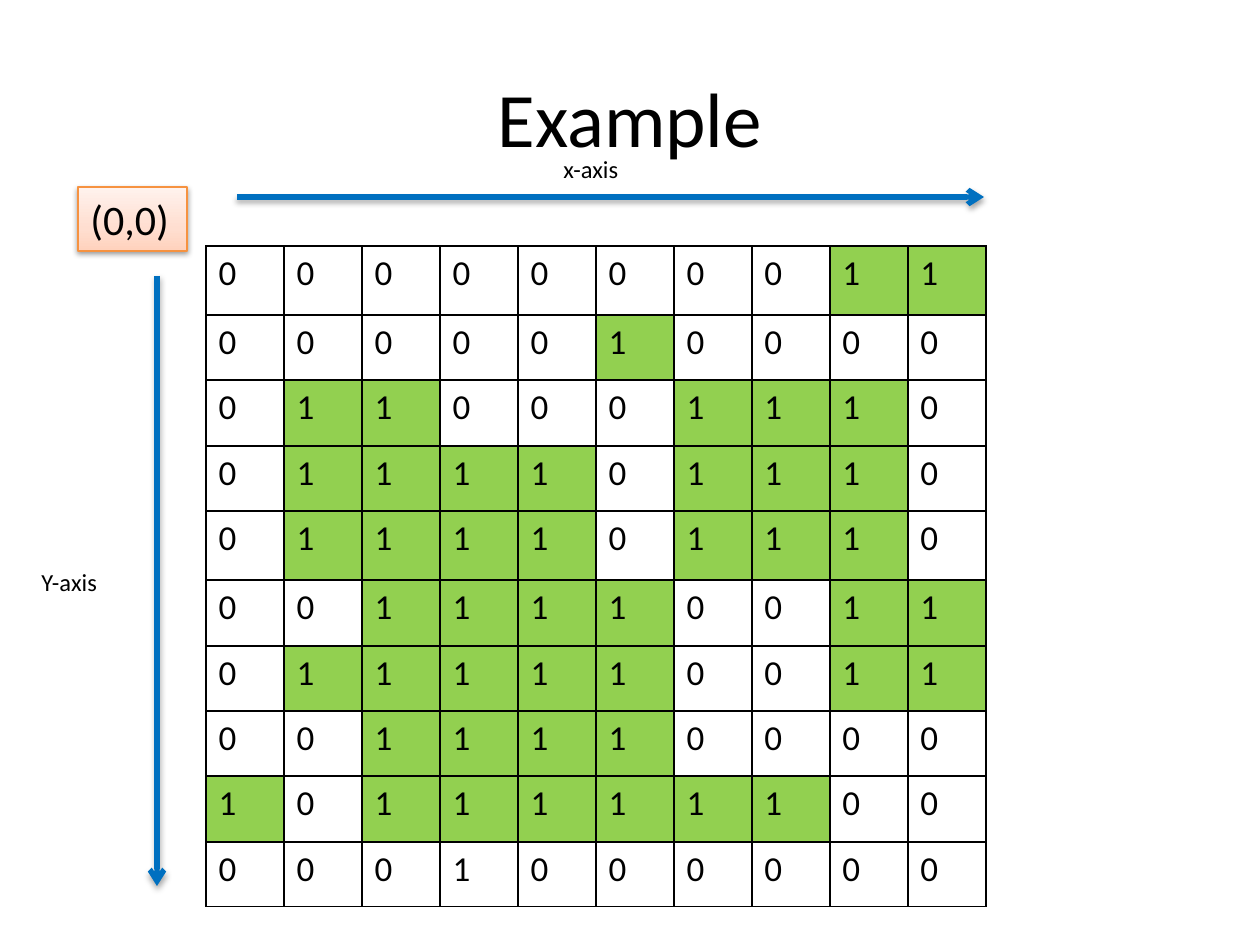
from lxml import etree
from pptx import Presentation, util as u
from pptx.dml.color import RGBColor
from pptx.enum import shapes, text

NS = "http://schemas.openxmlformats.org/drawingml/2006/main"
PX = u.Inches(1) / 126

BLACK = RGBColor(0x00, 0x00, 0x00)
BLUE = RGBColor(0x00, 0x70, 0xC0)
GREEN = RGBColor(0x92, 0xD0, 0x50)
ORANGE = RGBColor(0xF6, 0x92, 0x40)
PEACH_STOPS = [
    (0, RGBColor(0xFF, 0xD2, 0xBD)),
    (35, RGBColor(0xFF, 0xDE, 0xD0)),
    (100, RGBColor(0xFF, 0xF2, 0xED)),
]

# Binary grid: 1 marks an object pixel
PIXELS = [
    "0000000011",
    "0000010000",
    "0110001110",
    "0111101110",
    "0111101110",
    "0011110011",
    "0111110011",
    "0011110000",
    "1011111100",
    "0001000000",
]
UNFILLED_ONES = {(9, 3)}
ROW_HEIGHTS = [69, 65, 66, 65, 69, 66, 65, 65, 66, 65]
COLUMN_WIDTH = 78


def px(length):
    return u.Emu(round(length * PX))


def xml(markup):
    tag, rest = markup[1:].split(" ", 1)
    return etree.fromstring(f'<{tag} xmlns:a="{NS}" {rest}')


def write(frame, words, size=14, font="Calibri", color=BLACK,
          align=text.PP_ALIGN.LEFT, anchor=text.MSO_ANCHOR.TOP):
    frame.word_wrap = True
    frame.vertical_anchor = anchor
    paragraph = frame.paragraphs[0]
    paragraph.alignment = align
    run = paragraph.add_run()
    run.text = words
    run.font.size = u.Pt(size)
    run.font.name = font
    run.font.color.rgb = color


class GridSlide:
    def __init__(self, deck):
        self.slide = deck.slides.add_slide(deck.slide_layouts[5])
        self.shapes = self.slide.shapes

    def title(self, words, x, y, w, h):
        heading = self.shapes.title
        heading.left, heading.top, heading.width, heading.height = map(px, (x, y, w, h))
        write(heading.text_frame, words, size=44, align=text.PP_ALIGN.CENTER,
              anchor=text.MSO_ANCHOR.MIDDLE)

    def label(self, words, x, y, w, h):
        box = self.shapes.add_textbox(*map(px, (x, y, w, h)))
        write(box.text_frame, words)
        box.text_frame.auto_size = text.MSO_AUTO_SIZE.SHAPE_TO_FIT_TEXT

    def shadow(self, properties, distance, opacity):
        properties.append(xml(
            f'<a:effectLst ><a:outerShdw blurRad="40000" dist="{distance}" dir="5400000" '
            f'rotWithShape="0"><a:srgbClr val="000000"><a:alpha val="{opacity}000"/>'
            '</a:srgbClr></a:outerShdw></a:effectLst>'))

    def axis(self, x1, y1, x2, y2):
        arrow = self.shapes.add_connector(
            shapes.MSO_CONNECTOR.STRAIGHT, *map(px, (x1, y1, x2, y2)))
        arrow.line.color.rgb = BLUE
        arrow.line.width = u.Pt(3)
        arrow.line._get_or_add_ln().append(xml('<a:tailEnd type="arrow"/>'))
        self.shadow(arrow._element.spPr, 23000, 35)

    def origin(self, words, x, y, w, h):
        corner = self.shapes.add_shape(
            shapes.MSO_SHAPE.RECTANGLE, *map(px, (x, y, w, h)))
        corner.line.color.rgb = ORANGE
        corner.line.width = u.Pt(0.75)
        stops = "".join(f'<a:gs pos="{at}000"><a:srgbClr val="{color}"/></a:gs>'
                        for at, color in PEACH_STOPS)
        properties = corner._element.spPr
        properties.insert(2, xml(
            f'<a:gradFill rotWithShape="1"><a:gsLst>{stops}</a:gsLst>'
            '<a:lin ang="16200000" scaled="0"/></a:gradFill>'))
        self.shadow(properties, 20000, 38)
        write(corner.text_frame, words, size=24)
        corner.text_frame.auto_size = text.MSO_AUTO_SIZE.SHAPE_TO_FIT_TEXT

    def grid(self, pixels, x, y):
        columns = len(pixels[0])
        table = self.shapes.add_table(
            len(pixels), columns, px(x), px(y),
            px(COLUMN_WIDTH * columns), px(sum(ROW_HEIGHTS))).table
        table.first_row = table.horz_banding = False
        for column in table.columns:
            column.width = px(COLUMN_WIDTH)
        for r, values in enumerate(pixels):
            table.rows[r].height = px(ROW_HEIGHTS[r])
            for c, value in enumerate(values):
                self.pixel(table.cell(r, c), value,
                           value == "1" and (r, c) not in UNFILLED_ONES)

    def pixel(self, cell, value, marked):
        write(cell.text_frame, value, size=20)
        for side in "LRTB":
            cell._tc.get_or_add_tcPr().append(xml(
                f'<a:ln{side} w="12700"><a:solidFill><a:srgbClr val="{BLACK}"/>'
                f'</a:solidFill></a:ln{side}>'))
        if marked:
            cell.fill.solid()
            cell.fill.fore_color.rgb = GREEN
        else:
            cell.fill.background()


def main():
    deck = Presentation()
    deck.slide_width, deck.slide_height = px(1260), px(945)
    example = GridSlide(deck)
    example.title("Example", 63, 38, 1134, 157)
    example.grid(PIXELS, 206, 246)

    # Vertical axis and origin
    example.axis(157, 276, 157, 886)
    example.origin("(0,0)", 78, 187, 109, 64)
    example.label("Y-axis", 29, 561, 108, 42)

    # Horizontal axis
    example.axis(237, 197, 984, 197)
    example.label("x-axis", 551, 148, 108, 42)
    deck.save("out.pptx")


if __name__ == "__main__":
    main()
